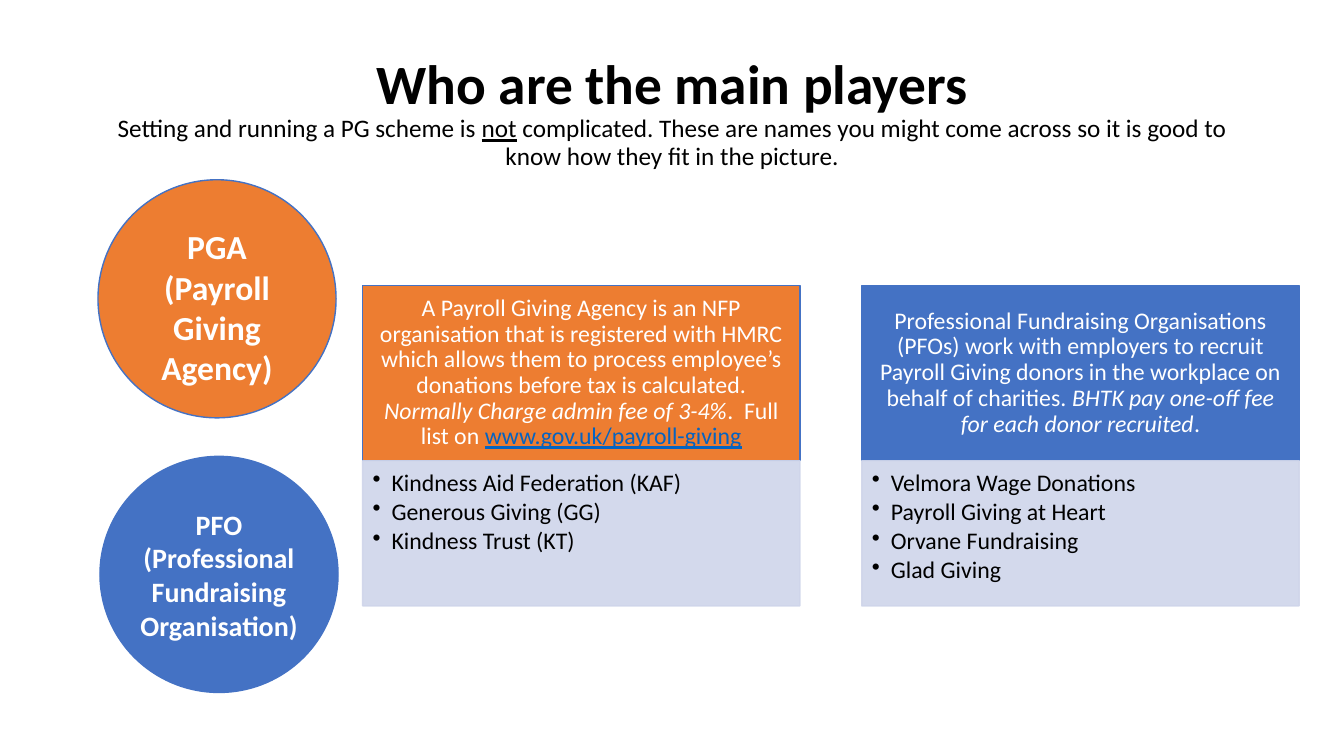
from lxml.etree import SubElement
from pptx import Presentation
from pptx.dml.color import RGBColor
from pptx.enum.shapes import MSO_SHAPE as Shape
from pptx.enum.text import MSO_ANCHOR as Anchor, MSO_AUTO_SIZE as AutoSize, PP_ALIGN as Align
from pptx.oxml.ns import qn
from pptx.util import Cm, Pt

ORANGE, BLUE, PALE = "ED7D31", "4472C4", "CFD5EA"
WHITE, BLACK, LINK = "FFFFFF", "000000", "0563C1"
PANEL_W, HEAD_H, LIST_H, PANEL_TOP = 11.02, 4.42, 3.66, 7.19


def rgb(hex_colour):
    return RGBColor.from_string(hex_colour)


def style(p, size, colour, align, bold=False):
    p.font.name, p.font.size, p.font.bold = "Calibri", Pt(size), bold
    p.font.color.rgb = rgb(colour)
    p.alignment = align


def add_runs(p, runs):
    """Each run is (text, {font attribute: value})."""
    for text, fmt in runs:
        r = p.add_run()
        r.text = text
        for name, value in fmt.items():
            if name == "color":
                r.font.color.rgb = rgb(value)
            else:
                setattr(r.font, name, value)


def add_box(s, kind, box, fill, line, insets, anchor=Anchor.MIDDLE):
    sp = s.shapes.add_shape(kind, *map(Cm, box))
    sp.shadow.inherit = False
    sp.fill.solid()
    sp.fill.fore_color.rgb = rgb(fill)
    sp.line.color.rgb = rgb(line)
    sp.line.width = Pt(1)
    tf = sp.text_frame
    tf.word_wrap = True
    tf.vertical_anchor = anchor
    tf.margin_left, tf.margin_top, tf.margin_right, tf.margin_bottom = map(Cm, insets)
    return sp


def make_translucent(sp, percent):
    for colour in sp._element.spPr.iter(qn("a:srgbClr")):
        SubElement(colour, qn("a:alpha"), val=str(percent * 1000))


def add_bullet(p):
    pPr = p._p.get_or_add_pPr()
    pPr.set("marL", str(Cm(0.48)))
    pPr.set("indent", str(-Cm(0.48)))
    bullet = pPr.makeelement(qn("a:buChar"), {"char": "•"})
    pPr.insert_element_before(bullet, "a:tabLst", "a:defRPr", "a:extLst")


def add_title(s, heading, runs):
    sp = s.shapes.title
    sp.left, sp.top, sp.width, sp.height = map(Cm, (2.13, 1.32, 29.62, 3.07))
    tf = sp.text_frame
    tf.auto_size = AutoSize.NONE
    tf.word_wrap = True
    tf.vertical_anchor = Anchor.MIDDLE
    p = tf.paragraphs[0]
    style(p, 18, BLACK, Align.CENTER)
    p.line_spacing = 0.9
    add_runs(p, [(heading, {"size": Pt(39.6), "bold": True})])
    p.add_line_break()
    add_runs(p, [(text, {"size": Pt(18), **fmt}) for text, fmt in runs])


def add_circle(s, box, fill, text, size, insets):
    sp = add_box(s, Shape.OVAL, box, fill, BLUE, insets)
    p = sp.text_frame.paragraphs[0]
    p.text = text
    style(p, size, WHITE, Align.CENTER, bold=True)


def add_panel(s, left, fill, runs, names):
    # Description
    head = add_box(s, Shape.RECTANGLE, (left, PANEL_TOP, PANEL_W, HEAD_H), fill, BLUE,
                   (0.33, 0.2, 0.33, 0.2))
    p = head.text_frame.paragraphs[0]
    style(p, 17, WHITE, Align.CENTER)
    p.line_spacing = 0.9
    add_runs(p, runs)

    # List of names
    body = add_box(s, Shape.RECTANGLE, (left, PANEL_TOP + HEAD_H, PANEL_W, LIST_H), PALE, PALE,
                   (0.25, 0.25, 0.33, 0.38), Anchor.TOP)
    make_translucent(body, 90)
    tf = body.text_frame
    tf.text = "\n".join(names)
    for p in tf.paragraphs:
        style(p, 17, BLACK, Align.LEFT)
        p.line_spacing = 0.9
        p.space_after = Pt(2.5)
        add_bullet(p)


def main():
    prs = Presentation()
    prs.slide_width, prs.slide_height = Cm(33.87), Cm(19.05)
    s = prs.slides.add_slide(prs.slide_layouts[5])

    add_title(s, "Who are the main players", [
        ("Setting and running a PG scheme is ", {}),
        ("not", {"underline": True}),
        (" complicated. These are names you might come across so it is good to "
         "know how they fit in the picture.", {}),
    ])

    # Kinds of organisation
    add_circle(s, (2.47, 4.53, 6, 6), ORANGE, "PGA (Payroll Giving Agency)", 24,
               (0.6, 0.4, 0.6, 0))
    add_circle(s, (2.52, 11.5, 6, 5.95), BLUE, "PFO (Professional Fundraising Organisation)", 20,
               (0, 0, 0, 0))

    # What they do and who they are
    add_panel(s, 9.14, ORANGE, [
        ("A Payroll Giving Agency is an NFP organisation that is registered with HMRC which "
         "allows them to process employee’s donations before tax is calculated. ", {}),
        ("Normally Charge admin fee of 3-4%", {"italic": True}),
        (".  Full list on ", {}),
        ("www.gov.uk/payroll-giving", {"color": LINK, "underline": True}),
    ], ["Kindness Aid Federation (KAF)", "Generous Giving (GG)", "Kindness Trust (KT)"])
    add_panel(s, 21.72, BLUE, [
        ("Professional Fundraising Organisations (PFOs) work with employers to recruit Payroll "
         "Giving donors in the workplace on behalf of charities. ", {}),
        ("BHTK pay one-off fee for each donor recruited", {"italic": True}),
        (".", {}),
    ], ["Velmora Wage Donations", "Payroll Giving at Heart", "Orvane Fundraising", "Glad Giving"])

    prs.save("out.pptx")


if __name__ == "__main__":
    main()
